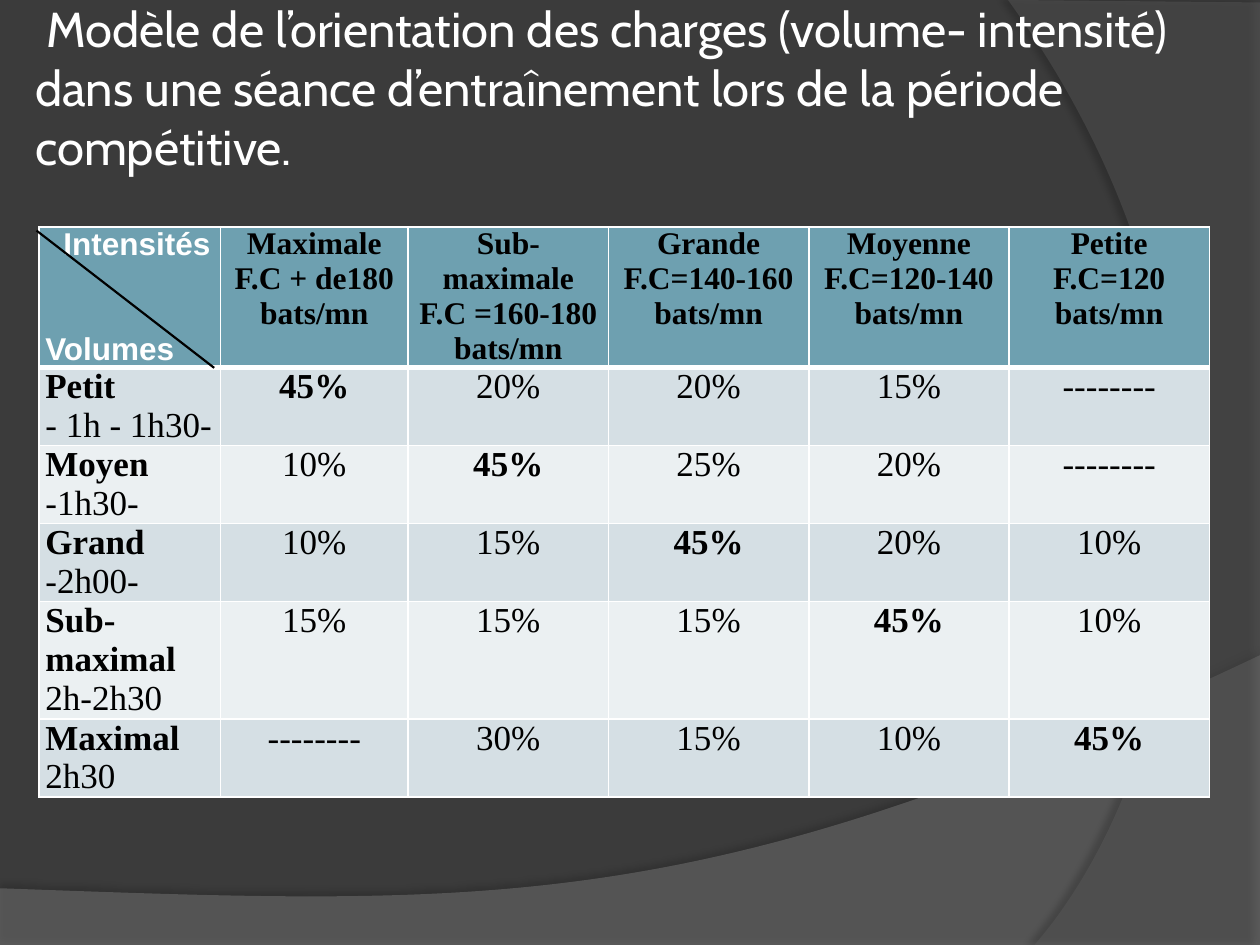
from lxml import etree
from pptx import Presentation
from pptx import util as u
from pptx.dml.color import RGBColor
from pptx.enum import shapes, text
from pptx.oxml import ns

WHITE = RGBColor(0xFF, 0xFF, 0xFF)
BLACK = RGBColor(0, 0, 0)
CHARCOAL = RGBColor(0x3B, 0x3B, 0x3B)
WAVE_GREY = RGBColor(0x7F, 0x7F, 0x7F)
ARC_GREY = RGBColor(0x5E, 0x5E, 0x5E)
TEAL = RGBColor(0x6E, 0xA0, 0xB0)
BANDS = (RGBColor(0xD5, 0xDF, 0xE4), RGBColor(0xEB, 0xF0, 0xF2))
ALIGN = text.PP_ALIGN

TITLE = (" Modèle de l’orientation des charges (volume- intensité) dans une "
         "séance d’entraînement lors de la période compétitive.\v")
HEADERS = [
    "Intensités\nVolumes",
    "Maximale\nF.C + de180 bats/mn",
    "Sub- maximale\nF.C =160-180\nbats/mn",
    "Grande\nF.C=140-160\nbats/mn",
    "Moyenne\nF.C=120-140\nbats/mn",
    "Petite\nF.C=120 bats/mn",
]
NONE = "--------"
PEAK = "45%"
ROWS = [
    ["Petit\n- 1h - 1h30-", PEAK, "20%", "20%", "15%", NONE],
    ["Moyen\n-1h30-", "10%", PEAK, "25%", "20%", NONE],
    ["Grand\n-2h00-", "10%", "15%", PEAK, "20%", "10%"],
    ["Sub-maximal\n2h-2h30", "15%", "15%", "15%", PEAK, "10%"],
    ["Maximal\n2h30", NONE, "30%", "15%", "10%", PEAK],
]
COLUMN_WIDTHS = [1.44, 1.49] + [1.59] * 4
ROW_HEIGHTS = [1.11, 0.62, 0.62, 0.62, 0.93, 0.62]


def add_xml(parent, tag, **attributes):
    """Append a drawing element to parent and return it."""
    return etree.SubElement(parent, ns.qn(tag), attributes)


class SlideBuilder:
    """Holds the style and the current slide."""

    title_font, body_font, label_font = "Cabin", "Times New Roman", "Arial"
    title_size, header_size, body_size = 28, 18, 20

    def __init__(self, page):
        """Start on a page with a dark background."""
        self.page = page
        page.background.fill.solid()
        page.background.fill.fore_color.rgb = CHARCOAL

    def style(self, para, font, size, color, bold=False, align=None):
        """Format a paragraph and its runs."""
        para.alignment = align
        for span in para.runs:
            span.font.name = font
            span.font.size = u.Pt(size)
            span.font.color.rgb = color
            span.font.bold = bold

    def bend(self, shape, handles):
        """Turn the first edge of a freeform into a cubic curve."""
        edge = shape._element.find(".//" + ns.qn("a:lnTo"))
        edge.tag = ns.qn("a:cubicBezTo")
        for index, (x, y) in enumerate(handles):
            point = etree.Element(ns.qn("a:pt"), x=str(u.Inches(x) - shape.left),
                                  y=str(u.Inches(y) - shape.top))
            edge.insert(index, point)

    def sweep(self, corners, handles, color, opacity, shade, distance, direction):
        """Draw a translucent background shape with a soft shadow."""
        points = [(u.Inches(x), u.Inches(y)) for x, y in corners]
        builder = self.page.shapes.build_freeform(*points[0])
        builder.add_line_segments(points[1:], close=True)
        shape = builder.convert_to_shape()
        self.bend(shape, handles)
        shape.fill.solid()
        shape.fill.fore_color.rgb = color
        shape.line.fill.background()
        shape.shadow.inherit = False
        properties = shape._element.spPr
        fill = properties.find(ns.qn("a:solidFill"))
        add_xml(fill[0], "a:alpha", val=str(opacity * 1000))
        shadow = add_xml(properties.find(ns.qn("a:effectLst")), "a:outerShdw",
                         blurRad=str(u.Pt(4)), dist=str(u.Pt(distance)),
                         dir=str(direction * 60000), rotWithShape="0")
        tint = add_xml(shadow, "a:srgbClr", val=str(BLACK))
        add_xml(tint, "a:alpha", val=str(shade * 1000))

    def title(self, words, left, top, width, height):
        """Place the title placeholder in front."""
        box = self.page.shapes.title
        box.left, box.top, box.width, box.height = map(u.Inches, (left, top, width, height))
        frame = box.text_frame
        frame.text = words
        frame.word_wrap = True
        frame.auto_size = text.MSO_AUTO_SIZE.NONE
        frame.vertical_anchor = text.MSO_ANCHOR.MIDDLE
        frame.margin_left = frame.margin_right = u.Inches(0.05)
        frame.margin_top = frame.margin_bottom = u.Inches(0.05)
        para = frame.paragraphs[0]
        self.style(para, self.title_font, self.title_size, WHITE, align=ALIGN.LEFT)
        line_break = para._p.find(ns.qn("a:br"))
        for parent, tag in ((line_break, "a:rPr"), (para._p, "a:endParaRPr")):
            ending = add_xml(parent, tag, sz=str(self.title_size * 100))
            add_xml(ending, "a:latin", typeface=self.title_font)
        self.page.shapes._spTree.append(box._element)

    def borders(self, cell, top, bottom):
        """Outline a cell in white."""
        properties = cell._tc.get_or_add_tcPr()
        for side, points in (("L", 1), ("R", 1), ("T", top), ("B", bottom)):
            edge = add_xml(properties, "a:ln" + side, w=str(u.Pt(points)))
            add_xml(add_xml(edge, "a:solidFill"), "a:srgbClr", val=str(WHITE))

    def cell(self, cell, words, row, column):
        """Fill and format one table cell."""
        cell.text = words
        cell.margin_left = cell.margin_right = u.Inches(0.05)
        cell.margin_top = cell.margin_bottom = 0
        self.borders(cell, 3 if row == 1 else 1, 3 if row == 0 else 1)
        cell.fill.solid()
        cell.fill.fore_color.rgb = BANDS[(row - 1) % 2] if row else TEAL
        size = self.body_size if row else self.header_size
        side = ALIGN.CENTER if column else ALIGN.JUSTIFY
        for index, para in enumerate(cell.text_frame.paragraphs):
            bold = row == 0 or words == PEAK or (column == 0 and index == 0)
            self.style(para, self.body_font, size, BLACK, bold, side)

    def corner(self, cell):
        """Set the two axis labels apart in the corner cell."""
        upper, lower = cell.text_frame.paragraphs
        for para, side in ((upper, ALIGN.RIGHT), (lower, ALIGN.LEFT)):
            self.style(para, self.label_font, self.header_size, WHITE, True, side)
        lower.space_before = u.Pt(40)
        cell.margin_right = u.Inches(0.08)

    def table(self, rows, left, top, widths, heights):
        """Add the table of loads."""
        frame = self.page.shapes.add_table(
            len(rows), len(widths), u.Inches(left), u.Inches(top),
            u.Inches(sum(widths)), u.Inches(sum(heights)))
        grid = frame.table
        for column, width in zip(grid.columns, widths):
            column.width = u.Inches(width)
        for line, height in zip(grid.rows, heights):
            line.height = u.Inches(height)
        for row, values in enumerate(rows):
            for column, words in enumerate(values):
                self.cell(grid.cell(row, column), words, row, column)
        self.corner(grid.cell(0, 0))

    def line(self, *ends):
        """Draw a thin black line."""
        link = self.page.shapes.add_connector(
            shapes.MSO_CONNECTOR.STRAIGHT, *map(u.Inches, ends))
        link.line.color.rgb = BLACK
        link.line.width = u.Pt(1.25)
        add_xml(link._element.spPr, "a:effectLst")


def main():
    """Build and save the slide."""
    deck = Presentation()
    deck.slide_width, deck.slide_height = u.Inches(10), u.Inches(7.5)
    slide = SlideBuilder(deck.slides.add_slide(deck.slide_layouts[5]))
    slide.sweep([(10, 5.2), (0, 7.05), (0, 7.51), (10, 7.51)],
                [(5.59, 7.29), (3.91, 7.19)], WAVE_GREY, 45, 35, 3.5, 270)
    slide.sweep([(8.21, 7.5), (8, 0), (10, 0.02), (10, 7.5)],
                [(9.35, 6.19), (10.18, 3)], ARC_GREY, 40, 45, 4, 180)
    slide.table([HEADERS] + ROWS, 0.31, 1.8, COLUMN_WIDTHS, ROW_HEIGHTS)
    slide.line(0.29, 1.83, 1.7, 2.92)
    slide.title(TITLE, 0.23, 0.3, 9.38, 1.25)
    deck.save("out.pptx")


if __name__ == "__main__":
    main()
